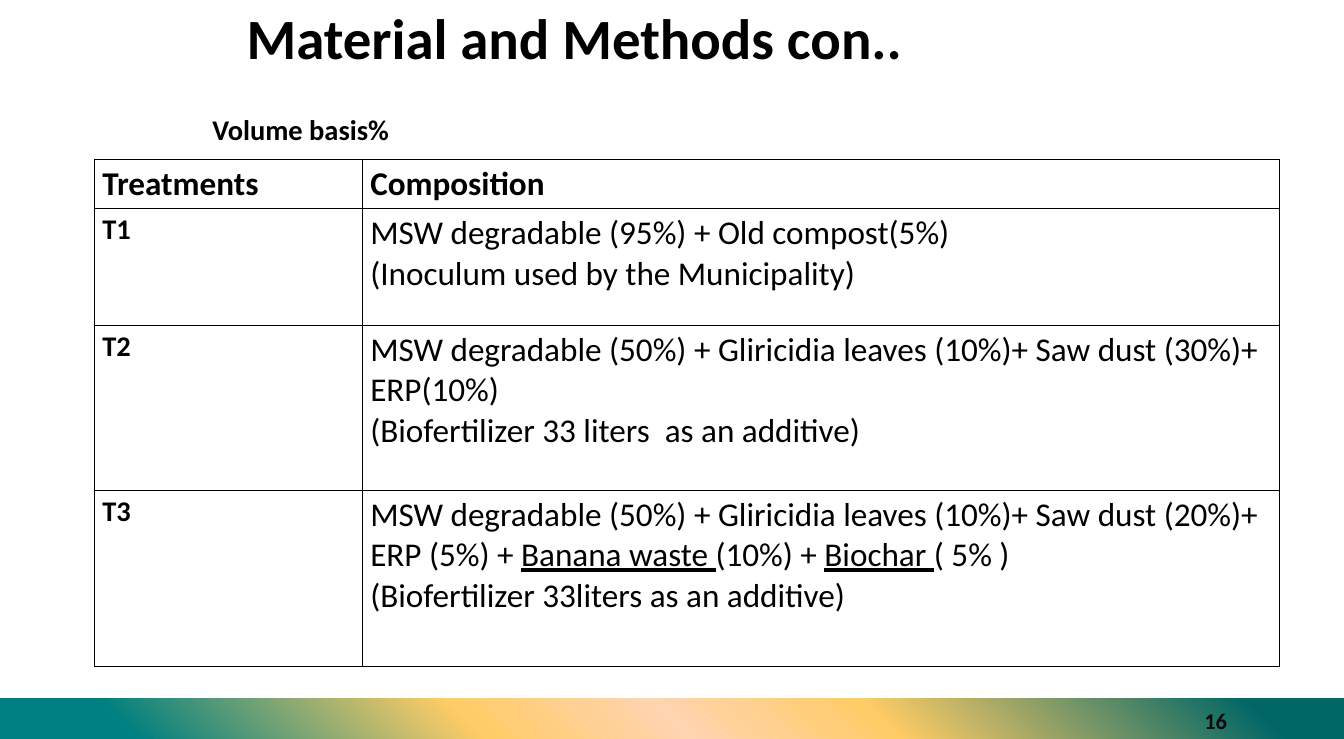
from pptx import Presentation
from pptx.dml.color import RGBColor
from pptx.enum.shapes import MSO_SHAPE
from pptx.enum.text import MSO_ANCHOR, MSO_AUTO_SIZE, PP_ALIGN
from pptx.oxml import parse_xml
from pptx.oxml.ns import nsdecls
from pptx.util import Inches, Pt

RECTANGLE = MSO_SHAPE.RECTANGLE
MIDDLE, TOP = MSO_ANCHOR.MIDDLE, MSO_ANCHOR.TOP
LEFT, RIGHT = PP_ALIGN.LEFT, PP_ALIGN.RIGHT
NO_AUTOFIT = MSO_AUTO_SIZE.NONE

BLACK = RGBColor(0x00, 0x00, 0x00)
NUMBER_GREY = RGBColor(0x0C, 0x0C, 0x0C)
TEAL = RGBColor(0x00, 0x80, 0x80)
DARK_TEAL = RGBColor(0x00, 0x66, 0x66)
AMBER = RGBColor(0xFF, 0xCC, 0x66)
PEACH = RGBColor(0xFF, 0xD4, 0xB1)

BAND_STOPS = [(0, TEAL), (10, TEAL), (35, AMBER), (50, PEACH),
              (65, AMBER), (93, DARK_TEAL), (100, DARK_TEAL)]

# Each composition is a list of lines; a line is a list of (text, underlined)
TREATMENTS = [
    ("T1", [[("MSW degradable (95%) + Old compost(5%)", False)],
            [("(Inoculum used by the Municipality)", False)]]),
    ("T2", [[("MSW degradable (50%) + Gliricidia leaves (10%)+ "
              "Saw dust (30%)+ ERP(10%)", False)],
            [("(Biofertilizer 33 liters  as an additive)", False)]]),
    ("T3", [[("MSW degradable (50%) + Gliricidia leaves (10%)+ "
              "Saw dust (20%)+ ERP (5%) + ", False),
             ("Banana waste ", True), ("(10%) + ", False),
             ("Biochar ", True), ("( 5% )", False)],
            [("(Biofertilizer 33liters as an additive)", False)]]),
]
COLUMN_WIDTHS = [3.14, 10.74]
ROW_HEIGHTS = [0.57, 1.37, 1.93, 2.07]


class SlideBuilder:
    font = "Calibri"
    wide_insets = (0.12, 0.06)
    cell_insets = (0.09, 0.05)

    def __init__(self, slide):
        self.slide = slide

    def add_lines(self, tf, lines, size, bold=True, color=BLACK, align=LEFT,
                  spacing=1.0):
        for i, line in enumerate(lines):
            p = tf.paragraphs[0] if i == 0 else tf.add_paragraph()
            p.alignment = align
            p.line_spacing = spacing
            for text, underlined in line:
                r = p.add_run()
                r.text = text
                style = {"name": self.font, "size": Pt(size), "bold": bold,
                         "underline": underlined}
                for name, value in style.items():
                    setattr(r.font, name, value)
                r.font.color.rgb = color

    def frame(self, tf, anchor, insets):
        x, y = map(Inches, insets)
        values = {"word_wrap": True, "auto_size": NO_AUTOFIT,
                  "vertical_anchor": anchor, "margin_left": x,
                  "margin_right": x, "margin_top": y, "margin_bottom": y}
        for name, value in values.items():
            setattr(tf, name, value)

    def title(self, box, text, size):
        sp = self.slide.shapes.title
        sp.left, sp.top, sp.width, sp.height = map(Inches, box)
        self.frame(sp.text_frame, MIDDLE, self.wide_insets)
        self.add_lines(sp.text_frame, [[(text, False)]], size, spacing=0.9)

    def text(self, box, text, size, anchor=TOP, insets=(0.1, 0.05), **style):
        tf = self.slide.shapes.add_textbox(*map(Inches, box)).text_frame
        self.frame(tf, anchor, insets)
        self.add_lines(tf, [[(text, False)]], size, **style)

    def band(self, box, stops):
        sp = self.slide.shapes.add_shape(RECTANGLE, *map(Inches, box))
        sp.shadow.inherit = False
        sp.line.fill.background()
        stop_xml = "".join(
            f'<a:gs pos="{pos * 1000}"><a:srgbClr val="{color}"/></a:gs>'
            for pos, color in stops)
        gradient = parse_xml(
            f'<a:gradFill {nsdecls("a")} rotWithShape="1">'
            f'<a:gsLst>{stop_xml}</a:gsLst><a:path path="circle">'
            '<a:fillToRect t="100000" r="100000"/></a:path></a:gradFill>')
        sp.fill.background()
        no_fill = sp.element.spPr.find("{*}noFill")
        sp.element.spPr.replace(no_fill, gradient)

    def borders(self, cell, color, width):
        tc_pr = cell._tc.get_or_add_tcPr()
        for i, side in enumerate(("lnL", "lnR", "lnT", "lnB")):
            line = parse_xml(
                f'<a:{side} {nsdecls("a")} w="{Pt(width)}"><a:solidFill>'
                f'<a:srgbClr val="{color}"/></a:solidFill></a:{side}>')
            tc_pr.insert(i, line)

    def cell(self, cell, lines, size, bold=True):
        x, y = map(Inches, self.cell_insets)
        values = {"margin_left": x, "margin_right": x, "margin_top": y,
                  "margin_bottom": y, "vertical_anchor": TOP}
        for name, value in values.items():
            setattr(cell, name, value)
        cell.fill.background()
        self.borders(cell, BLACK, 1)
        self.add_lines(cell.text_frame, lines, size, bold)

    def table(self, left, top, widths, heights, header, rows):
        box = map(Inches, (left, top, sum(widths), sum(heights)))
        table = self.slide.shapes.add_table(
            len(heights), len(widths), *box).table
        table.first_row = table.horz_banding = False
        for column, width in zip(table.columns, widths):
            column.width = Inches(width)
        for row, height in zip(table.rows, heights):
            row.height = Inches(height)
        for i, text in enumerate(header):
            self.cell(table.cell(0, i), [[(text, False)]], 28)
        for i, (name, composition) in enumerate(rows, start=1):
            self.cell(table.cell(i, 0), [[(name, False)]], 24)
            self.cell(table.cell(i, 1), composition, 28, bold=False)


def main():
    prs = Presentation()
    prs.slide_width, prs.slide_height = Inches(15.75), Inches(8.66)
    s = SlideBuilder(prs.slides.add_slide(prs.slide_layouts[5]))

    # Footer band and slide number
    s.band((0, 8.18, 15.75, 0.48), BAND_STOPS)
    s.text((10.96, 8.21, 3.54, 0.46), "16", 19, MIDDLE, s.wide_insets,
           color=NUMBER_GREY, align=RIGHT)

    # Heading and table caption
    s.title((2.77, -0.26, 11.99, 1.49), "Material and Methods con..", 48)
    s.text((2.39, 1.26, 3.05, 0.5), "Volume basis%", 24)

    # Treatments
    s.table(1.11, 1.87, COLUMN_WIDTHS, ROW_HEIGHTS,
            ("Treatments", "Composition"), TREATMENTS)

    prs.save("out.pptx")


if __name__ == "__main__":
    main()
